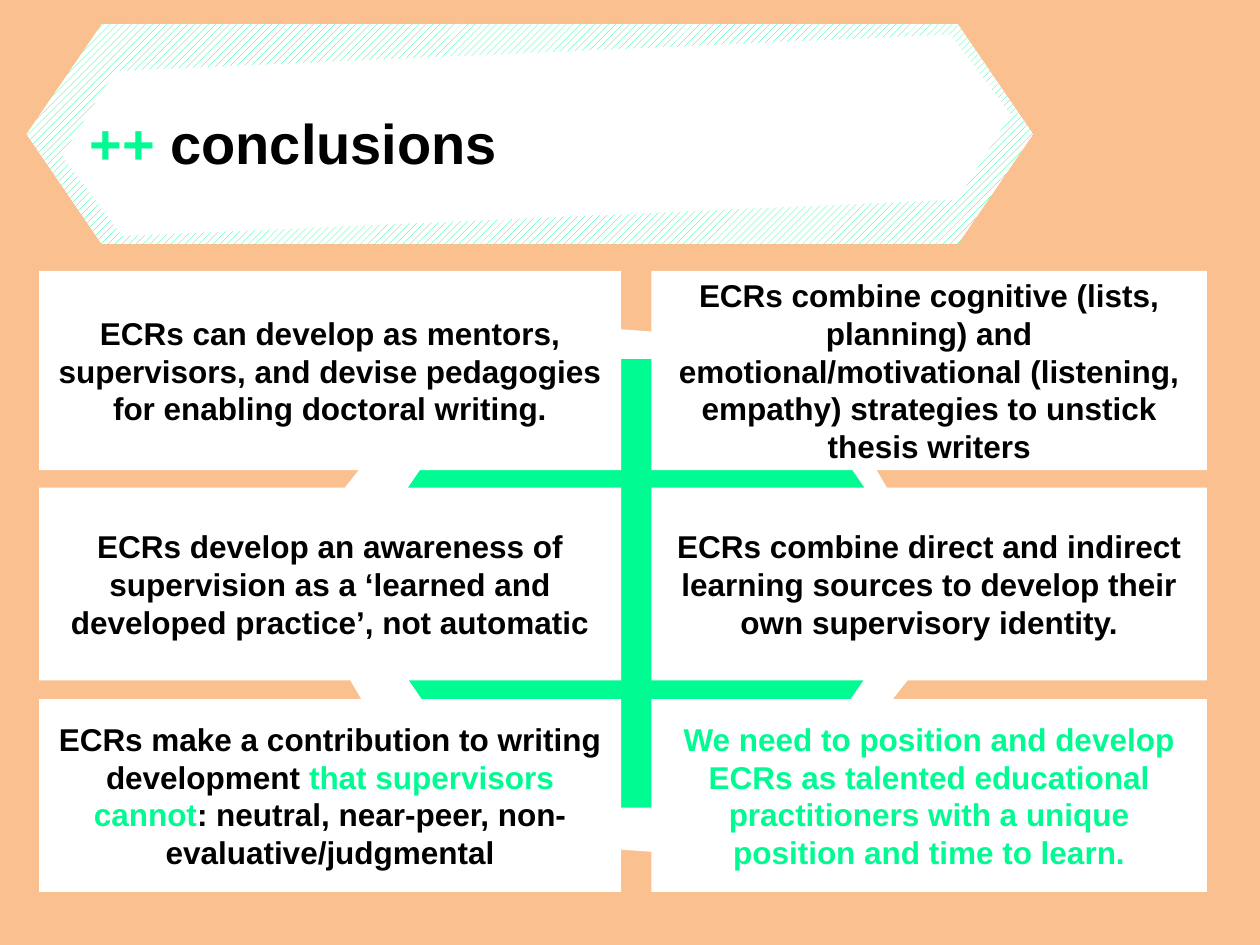
import pptx
import pptx.util
import pptx.dml.color
import pptx.enum.dml
import pptx.enum.shapes
import pptx.enum.text

Pt = pptx.util.Pt
ALIGN = pptx.enum.text.PP_ALIGN
COLORS = {"peach": "FAC090", "green": "00FB92", "white": "FFFFFF", "black": "000000"}


def rgb(name):
    return pptx.dml.color.RGBColor.from_string(COLORS[name])


def add_block(shapes, kind, box, fill, rotation=0):
    block = shapes.add_shape(kind, *[Pt(length) for length in box])
    block.shadow.inherit = False
    block.line.fill.background()
    block.fill.solid()
    block.fill.fore_color.rgb = rgb(fill)
    block.rotation = rotation
    if kind == pptx.enum.shapes.MSO_SHAPE.HEXAGON:
        block.adjustments[0] = 0.342
    return block


HEXAGON = pptx.enum.shapes.MSO_SHAPE.HEXAGON
RECTANGLE = pptx.enum.shapes.MSO_SHAPE.RECTANGLE

presentation = pptx.Presentation()
presentation.slide_width, presentation.slide_height = Pt(720), Pt(540)
slide = presentation.slides.add_slide(presentation.slide_layouts[5])
slide.background.fill.solid()
slide.background.fill.fore_color.rgb = rgb("peach")

# Hexagons behind the cards
centrepiece = slide.shapes.add_group_shape()
add_block(centrepiece.shapes, HEXAGON, (161.3, 188.6, 388.1, 296.6), "white", 4.1)
add_block(centrepiece.shapes, HEXAGON, (195.8, 205.2, 335.5, 256.3), "green")

# Conclusion cards: two columns, three rows
columns = [(22.3, 332.6), (372.2, 317.5)]
rows = [(154.8, 113.8), (278.7, 110.2), (399.5, 110.2)]
conclusions = [
    [
        [("ECRs can develop as mentors, supervisors, and devise pedagogies "
          "for enabling doctoral writing.", "black")],
        [("ECRs combine cognitive (lists, planning) and emotional/motivational "
          "(listening, empathy) strategies to unstick thesis writers", "black")],
    ],
    [
        [("ECRs develop an awareness of supervision as a ‘learned and "
          "developed practice’, not automatic", "black")],
        [("ECRs combine direct and indirect learning sources to develop "
          "their own supervisory identity.", "black")],
    ],
    [
        [("ECRs make a contribution to writing development ", "black"),
         ("that supervisors cannot", "green"),
         (": neutral, near-peer, non-evaluative/judgmental", "black")],
        [("We need to position and develop ECRs as talented educational "
          "practitioners with a unique position and time to learn.", "green")],
    ],
]
passages = []
for (top, height), row in zip(rows, conclusions):
    for (left, width), pieces in zip(columns, row):
        card = add_block(slide.shapes, RECTANGLE, (left, top, width, height), "white")
        card.text_frame.word_wrap = True
        card.text_frame.vertical_anchor = pptx.enum.text.MSO_ANCHOR.MIDDLE
        passages.append((card.text_frame.paragraphs[0], pieces, 18, ALIGN.CENTER))

# Title banner
banner = add_block(slide.shapes, HEXAGON, (15.1, 13.7, 575.3, 126), "white")
banner.fill.patterned()
banner.fill.pattern = pptx.enum.dml.MSO_PATTERN.WIDE_UPWARD_DIAGONAL
banner.fill.fore_color.rgb = rgb("green")
banner.fill.back_color.rgb = rgb("white")
add_block(slide.shapes, HEXAGON, (35.3, 30.2, 542.2, 94.3), "white", 357.5)

# Title, brought in front of the banner
title = slide.shapes.title
title.left, title.top, title.width, title.height = Pt(43.9), Pt(58.3), Pt(512.6), Pt(46.1)
title.text_frame.word_wrap = True
title.text_frame.auto_size = pptx.enum.text.MSO_AUTO_SIZE.SHAPE_TO_FIT_TEXT
title.text_frame.vertical_anchor = pptx.enum.text.MSO_ANCHOR.TOP
slide.shapes._spTree.append(title._element)
passages.append((title.text_frame.paragraphs[0],
                 [("++", "green"), (" conclusions", "black")], 32, ALIGN.LEFT))

# Wording and text format
for paragraph, pieces, size, alignment in passages:
    paragraph.alignment = alignment
    for words, color in pieces:
        run = paragraph.add_run()
        run.text = words
        run.font.name = "Arial"
        run.font.size = Pt(size)
        run.font.bold = True
        run.font.color.rgb = rgb(color)

presentation.save("out.pptx")
